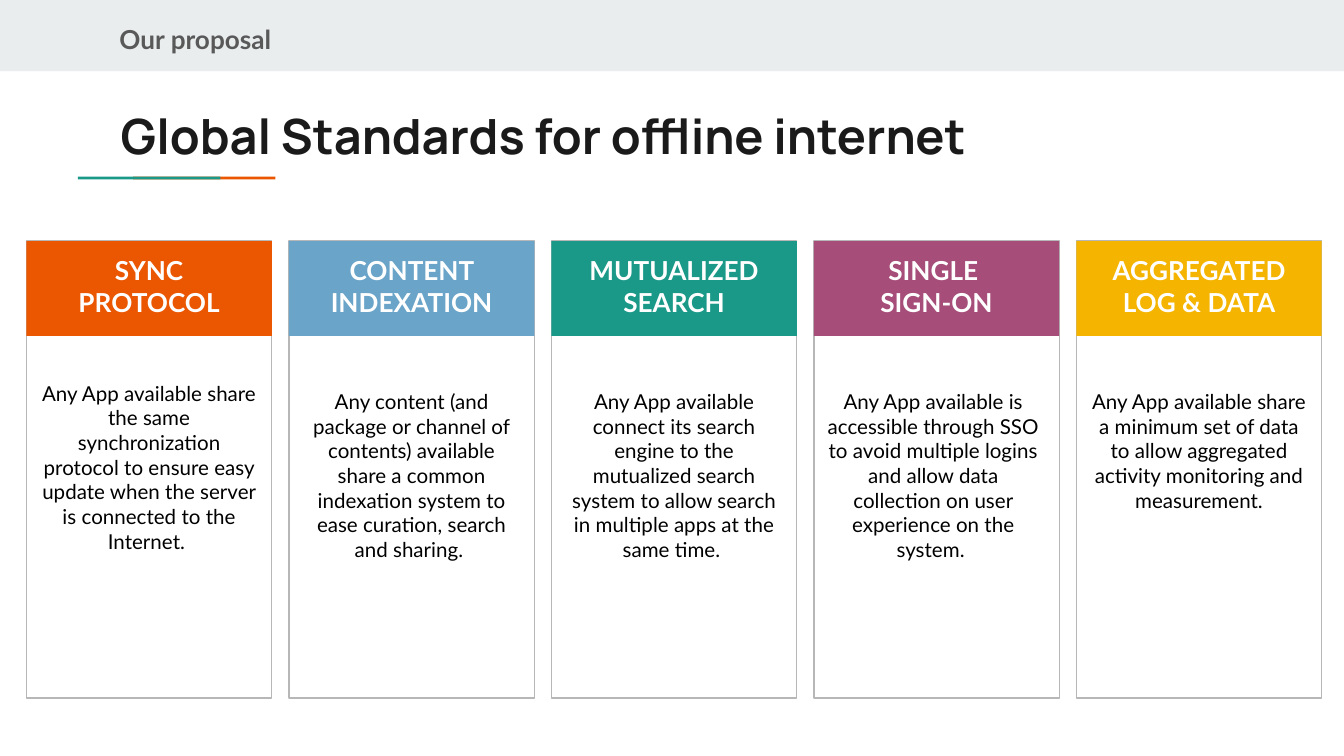
"""Build the slide on the five global standards for offline internet."""
from pptx import Presentation
from pptx.dml.color import RGBColor
from pptx.enum.shapes import MSO_SHAPE
from pptx.enum.text import MSO_ANCHOR, PP_ALIGN
from pptx.util import Inches, Pt

THEME = {
    "band": "E9EDEE", "title": "1A1A1A", "section": "595959",
    "border": "B7B7B7", "heading": "FFFFFF", "body": "000000",
    "orange": "EB5600", "blue": "6AA4C8", "teal": "1A9988",
    "plum": "A64D79", "yellow": "F4B400",
    "title_font": "Manrope", "text_font": "Lato",
    "title_size": 26, "heading_size": 14, "body_size": 11, "border_width": 0.75,
}

presentation = Presentation()
presentation.slide_width = Inches(10)
presentation.slide_height = presentation.slide_width * 9 // 16
slide = presentation.slides.add_slide(presentation.slide_layouts[6])
unit = presentation.slide_width / 100


def add_box(area, fill=None, border=None):
    shape = slide.shapes.add_shape(MSO_SHAPE.RECTANGLE, *(round(length * unit) for length in area))
    shape.shadow.inherit = False
    if fill:
        shape.fill.solid()
        shape.fill.fore_color.rgb = RGBColor.from_string(THEME[fill])
    else:
        shape.fill.background()
    if border:
        shape.line.color.rgb = RGBColor.from_string(THEME[border])
        shape.line.width = Pt(THEME["border_width"])
    else:
        shape.line.fill.background()


def add_text(area, lines, color, size, bold=False, font="text_font", align=PP_ALIGN.CENTER):
    text_box = slide.shapes.add_textbox(*(round(length * unit) for length in area))
    frame = text_box.text_frame
    frame.word_wrap = True
    frame.vertical_anchor = MSO_ANCHOR.TOP
    frame.margin_left = frame.margin_right = round(unit)
    frame.margin_top = frame.margin_bottom = round(unit)
    for index, line in enumerate(lines):
        paragraph = frame.add_paragraph() if index else frame.paragraphs[0]
        paragraph.alignment = align
        run = paragraph.add_run()
        run.text = line
        run.font.name = THEME[font]
        run.font.size = Pt(THEME[size])
        run.font.bold = bold
        run.font.color.rgb = RGBColor.from_string(THEME[color])


add_box((0, 0, 100, 5.3), "band")
add_box((9.9, 13.15, 10.6, 0.2), "orange")
add_box((5.8, 13.15, 10.6, 0.2), "teal")
add_text((8, 6.9, 84.1, 5.9), ["Global Standards for offline internet"],
         "title", "title_size", True, "title_font", PP_ALIGN.LEFT)
add_text((7.9, 0.75, 19.5, 4), ["Our proposal"],
         "section", "heading_size", True, align=PP_ALIGN.LEFT)

standards = [
    ("orange", ["SYNC", "PROTOCOL"], 0, 27.33,
     "Any App available share the same synchronization protocol to ensure easy "
     "update when the server is connected to the Internet. "),
    ("blue", ["CONTENT INDEXATION"], 0, 27.95,
     "Any content (and package or channel of contents) available share a common "
     "indexation system to ease curation, search and sharing. "),
    ("teal", ["MUTUALIZED SEARCH"], 0, 27.95,
     "Any App available connect its search engine to the mutualized search system "
     "to allow search in multiple apps at the same time. "),
    ("plum", ["SINGLE ", "SIGN-ON"], -0.25, 27.95,
     "Any App available is accessible through SSO to avoid multiple logins and "
     "allow data collection on user experience on the system. "),
    ("yellow", ["AGGREGATED LOG & DATA"], 0, 27.95,
     "Any App available share a minimum set of data to allow aggregated activity "
     "monitoring and measurement."),
]
first_left, column_pitch, card_width, card_top = 1.97, 19.53, 18.26, 17.95

for column, (color, heading, body_shift, body_top, body) in enumerate(standards):
    left = first_left + column * column_pitch
    add_box((left, card_top, card_width, 34), border="border")
    add_box((left, card_top, card_width, 7.05), color)
    add_text((left, card_top, card_width, 6.5), heading, "heading", "heading_size", True)
    add_text((left + body_shift, body_top, card_width, 23.2), [body], "body", "body_size")

presentation.save("out.pptx")
